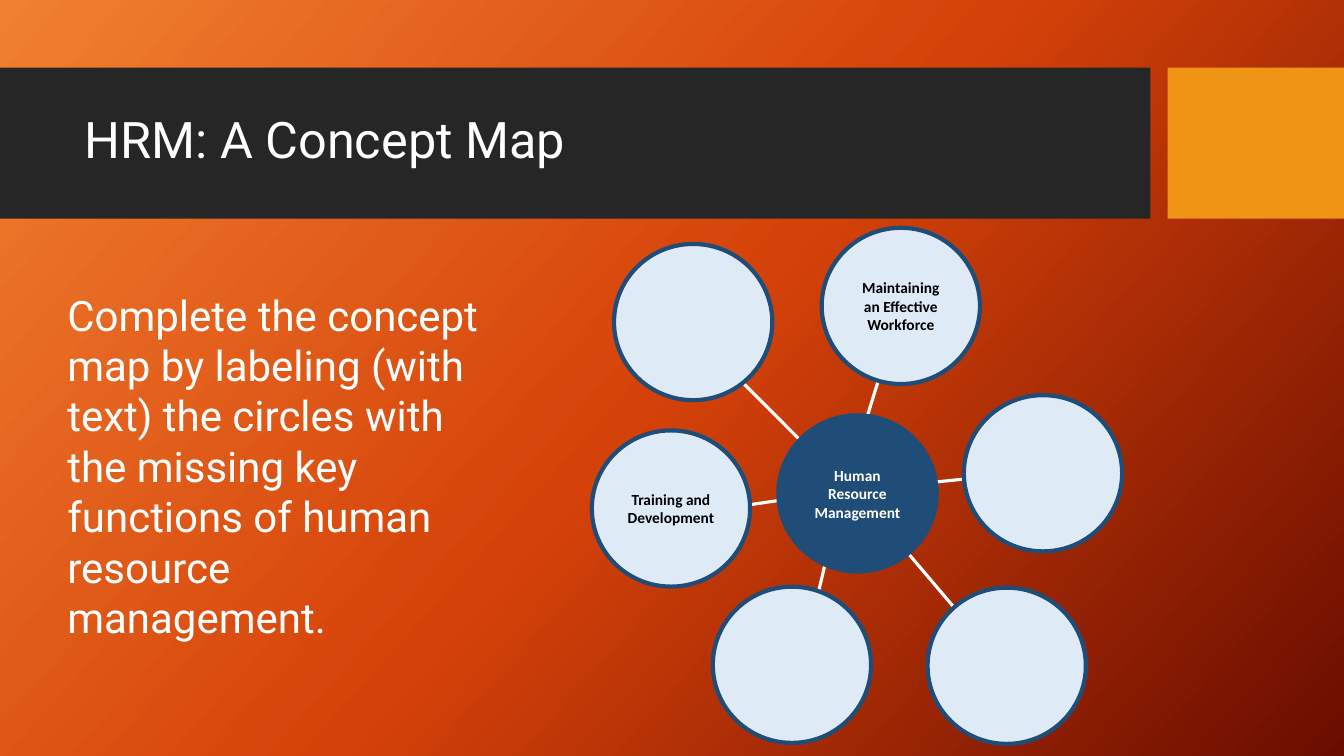
import copy

import lxml.etree
import pptx
import pptx.dml.color
import pptx.enum.shapes
import pptx.enum.text
import pptx.oxml.ns
import pptx.util

RGBColor = pptx.dml.color.RGBColor
Shape = pptx.enum.shapes.MSO_SHAPE
Anchor = pptx.enum.text.MSO_ANCHOR
Align = pptx.enum.text.PP_ALIGN
AutoSize = pptx.enum.text.MSO_AUTO_SIZE

EMU_PER_PX = 9144
CIRCLE_SIZE = (157, 155)

WHITE = RGBColor(0xFF, 0xFF, 0xFF)
BLACK = RGBColor(0x00, 0x00, 0x00)
CHARCOAL = RGBColor(0x26, 0x26, 0x26)
AMBER = RGBColor(0xF0, 0x94, 0x15)
NAVY = RGBColor(0x1F, 0x4D, 0x78)
PALE_BLUE = RGBColor(0xDE, 0xEA, 0xF6)
LIGHT_ORANGE = RGBColor(0xF1, 0x80, 0x31)
DEEP_ORANGE = RGBColor(0xD5, 0x42, 0x09)
DARK_RED = RGBColor(0x6A, 0x0D, 0x00)

SPOKES = [
    (728, 503, 776, 496),
    (920, 479, 959, 475),
    (808, 603, 824, 536),
    (858, 420, 871, 378),
    (961, 620, 894, 541),
    (792, 435, 729, 372),
]
FUNCTIONS = [
    (609, 242, ""),
    (956, 392, ""),
    (587, 427, "Training and Development"),
    (920, 583, ""),
    (707, 582, ""),
    (815, 226, "Maintaining an Effective Workforce"),
]


def px(*lengths):
    return [pptx.util.Emu(length * EMU_PER_PX) for length in lengths]


def paint_background(slide):
    fill = slide.background.fill
    fill.gradient()
    fill.gradient_angle = 360 - 42
    stop_list = next(slide.element.iter(pptx.oxml.ns.qn("a:gsLst")))
    stop_list.insert(1, copy.deepcopy(stop_list[0]))
    colors = (LIGHT_ORANGE, DEEP_ORANGE, DARK_RED)
    for stop, position, color in zip(fill.gradient_stops, (0, 0.5, 1), colors):
        stop.position = position
        stop.color.rgb = color


def write_text(shape, text, font_name, size, color, bold=False):
    frame = shape.text_frame
    frame.word_wrap = True
    frame.text = text
    font = frame.paragraphs[0].runs[0].font
    font.name = font_name
    font.size = pptx.util.Pt(size)
    font.color.rgb = color
    font.bold = bold


def add_filled_shape(slide, kind, box, color):
    shape = slide.shapes.add_shape(kind, *px(*box))
    shape.shadow.inherit = False
    shape.fill.solid()
    shape.fill.fore_color.rgb = color
    shape.line.fill.background()
    return shape


def add_text(slide, box, text, size):
    text_box = slide.shapes.add_textbox(*px(*box))
    write_text(text_box, text, "Roboto", size, WHITE)
    return text_box


def add_spoke(slide, ends):
    line_type = pptx.enum.shapes.MSO_CONNECTOR.STRAIGHT
    spoke = slide.shapes.add_connector(line_type, *px(*ends))
    spoke.line.color.rgb = WHITE
    spoke.line.width = pptx.util.Pt(2.25)
    properties = spoke.element.find(pptx.oxml.ns.qn("p:spPr"))
    lxml.etree.SubElement(properties, pptx.oxml.ns.qn("a:effectLst"))


def add_circle(slide, left, top, label, fill_color, text_color):
    circle = add_filled_shape(
        slide, Shape.OVAL, (left, top, *CIRCLE_SIZE), fill_color
    )
    circle.line.color.rgb = NAVY
    circle.line.width = pptx.util.Pt(3)
    if label:
        write_text(circle, label, "Calibri", 11, text_color, bold=True)
        circle.text_frame.vertical_anchor = Anchor.MIDDLE
        circle.text_frame.paragraphs[0].alignment = Align.CENTER


def main():
    presentation = pptx.Presentation()
    presentation.slide_width, presentation.slide_height = px(1333, 750)
    slide = presentation.slides.add_slide(presentation.slide_layouts[6])
    paint_background(slide)

    add_filled_shape(slide, Shape.RECTANGLE, (0, 67, 1141, 150), CHARCOAL)
    add_filled_shape(slide, Shape.RECTANGLE, (1158, 67, 175, 150), AMBER)
    title = add_text(slide, (74, 82, 1051, 118), "HRM: A Concept Map", 36)
    title.text_frame.vertical_anchor = Anchor.MIDDLE
    title.text_frame.paragraphs[0].line_spacing = 0.9

    for ends in SPOKES:
        add_spoke(slide, ends)
    add_circle(slide, 772, 412, "Human Resource Management", NAVY, WHITE)
    for left, top, label in FUNCTIONS:
        add_circle(slide, left, top, label, PALE_BLUE, BLACK)

    task = add_text(
        slide,
        (57, 282, 438, 364),
        "Complete the concept map by labeling (with text) the circles with "
        "the missing key functions of human resource management.",
        30,
    )
    task.text_frame.auto_size = AutoSize.SHAPE_TO_FIT_TEXT

    presentation.save("out.pptx")


if __name__ == "__main__":
    main()
